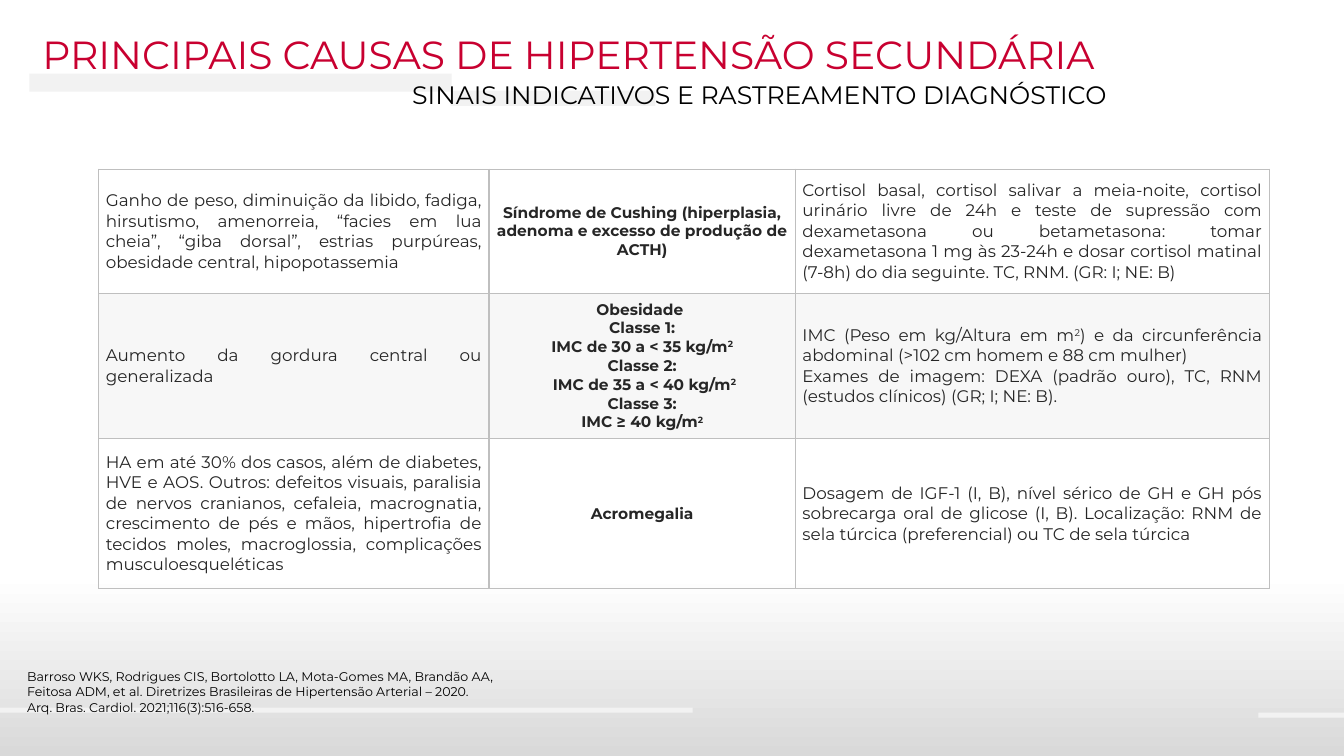
from dataclasses import dataclass

from lxml.etree import SubElement
from pptx import Presentation
from pptx.dml.color import RGBColor
from pptx.enum.shapes import MSO_SHAPE
from pptx.enum.text import MSO_ANCHOR, PP_ALIGN
from pptx.oxml.ns import qn
from pptx.slide import Slide
from pptx.table import _Cell
from pptx.text.text import TextFrame
from pptx.util import Inches, Pt

Line = str | tuple[str, ...]


@dataclass(frozen=True)
class Theme:
    font: str = "Montserrat"
    white: str = "FFFFFF"
    bar: str = "F2F2F2"
    shade: str = "D9D9D9"
    border: str = "BFBFBF"
    title: str = "C80030"
    black: str = "000000"
    body: str = "262626"
    title_size: int = 28
    subtitle_size: int = 18
    finding_size: int = 12
    cause_size: int = 11
    citation_size: int = 9


@dataclass(frozen=True)
class Box:
    left: float
    top: float
    width: float
    height: float

    def lengths(self) -> tuple[Inches, Inches, Inches, Inches]:
        return Inches(self.left), Inches(self.top), Inches(self.width), Inches(self.height)


@dataclass(frozen=True)
class Cause:
    height: float
    signs: tuple[Line, ...]
    name: tuple[Line, ...]
    screening: tuple[Line, ...]
    shaded: bool = False


THEME = Theme()
BACKDROP = Box(0, 0, 13.33, 7.5)
BARS = (
    Box(0.29, 0.73, 4.19, 0.18),
    Box(4.47, 0.9, 2.03, 0.15),
    Box(-0.02, 7.02, 6.89, 0.05),
    Box(12.48, 7.07, 0.85, 0.05),
)
TITLE_BOX = Box(0.32, 0.25, 11.46, 0.57)
SUBTITLE_BOX = Box(3.99, 0.74, 9.56, 0.4)
CITATION_BOX = Box(0.17, 6.59, 6.24, 0.56)
TABLE_BOX = Box(0.98, 1.68, 11.61, 4.16)
COLUMN_WIDTHS = (3.87, 3.04, 4.7)
CITATION = (
    "Barroso WKS, Rodrigues CIS, Bortolotto LA, Mota-Gomes MA, Brandão AA,",
    "Feitosa ADM, et al. Diretrizes Brasileiras de Hipertensão Arterial – 2020.",
    "Arq. Bras. Cardiol. 2021;116(3):516-658.",
)
CAUSES = (
    Cause(
        1.23,
        ("Ganho de peso, diminuição da libido, fadiga, hirsutismo, amenorreia, “facies em lua cheia”, "
         "“giba dorsal”, estrias purpúreas, obesidade central, hipopotassemia",),
        ("Síndrome de Cushing (hiperplasia, adenoma e excesso de produção de ACTH)",),
        ("Cortisol basal, cortisol salivar a meia-noite, cortisol urinário livre de 24h e teste de "
         "supressão com dexametasona ou betametasona: tomar dexametasona 1 mg às 23-24h e dosar "
         "cortisol matinal (7-8h) do dia seguinte. TC, RNM. (GR: I; NE: B)",),
    ),
    Cause(
        1.44,
        ("Aumento da gordura central ou generalizada",),
        (
            "Obesidade ",
            "Classe 1:",
            ("IMC de 30 a < 35 kg/m", "2"),
            "Classe 2:",
            (" IMC de 35 a < 40 kg/m", "2"),
            "Classe 3:",
            ("IMC ≥ 40 kg/m", "2"),
        ),
        (
            ("IMC (Peso em kg/Altura em m", "2",
             ") e da circunferência abdominal (>102 cm homem e 88 cm mulher)"),
            "Exames de imagem: DEXA (padrão ouro), TC, RNM (estudos clínicos) (GR; I; NE: B).",
        ),
        shaded=True,
    ),
    Cause(
        1.49,
        ("HA em até 30% dos casos, além de diabetes, HVE e AOS. Outros: defeitos visuais, paralisia de "
         "nervos cranianos, cefaleia, macrognatia, crescimento de pés e mãos, hipertrofia de tecidos "
         "moles, macroglossia, complicações musculoesqueléticas",),
        ("Acromegalia",),
        ("Dosagem de IGF-1 (I, B), nível sérico de GH e GH pós sobrecarga oral de glicose (I, B). "
         "Localização: RNM de sela túrcica (preferencial) ou TC de sela túrcica",),
    ),
)


def write_text(frame: TextFrame, lines: tuple[Line, ...], *, size: int, color: str,
               bold: bool = False, alignment: PP_ALIGN = PP_ALIGN.LEFT) -> None:
    frame.word_wrap = True
    for index, line in enumerate(lines):
        paragraph = frame.add_paragraph() if index else frame.paragraphs[0]
        paragraph.alignment = alignment
        pieces = (line,) if isinstance(line, str) else line
        for position, piece in enumerate(pieces):
            run = paragraph.add_run()
            run.text = piece
            run.font.name = THEME.font
            run.font.size = Pt(size)
            run.font.bold = bold
            run.font.color.rgb = RGBColor.from_string(color)
            if position % 2:
                run._r.get_or_add_rPr().set("baseline", "30000")


def add_backdrop(slide: Slide) -> None:
    backdrop = slide.shapes.add_shape(MSO_SHAPE.RECTANGLE, *BACKDROP.lengths())
    backdrop.shadow.inherit = False
    backdrop.line.fill.background()
    backdrop.fill.gradient()
    backdrop.fill.gradient_angle = 270
    stops = ((0.76, THEME.white), (1, THEME.shade))
    for stop, (position, color) in zip(backdrop.fill.gradient_stops, stops):
        stop.position = position
        stop.color.rgb = RGBColor.from_string(color)


def add_bar(slide: Slide, box: Box) -> None:
    bar = slide.shapes.add_shape(MSO_SHAPE.RECTANGLE, *box.lengths())
    bar.shadow.inherit = False
    bar.line.fill.background()
    bar.fill.solid()
    bar.fill.fore_color.rgb = RGBColor.from_string(THEME.bar)


def add_title(slide: Slide) -> None:
    title = slide.shapes.title
    title.left, title.top, title.width, title.height = TITLE_BOX.lengths()
    title.text_frame.vertical_anchor = MSO_ANCHOR.TOP
    write_text(title.text_frame, ("PRINCIPAIS CAUSAS DE HIPERTENSÃO SECUNDÁRIA",),
               size=THEME.title_size, color=THEME.title)
    title.element.getparent().append(title.element)


def format_cell(cell: _Cell, shaded: bool) -> None:
    cell.vertical_anchor = MSO_ANCHOR.MIDDLE
    cell.margin_left = cell.margin_right = Inches(0.07)
    cell.margin_top = cell.margin_bottom = 0
    properties = cell._tc.get_or_add_tcPr()
    for side in ("a:lnL", "a:lnR", "a:lnT", "a:lnB"):
        border = SubElement(properties, qn(side), w=str(Pt(1)))
        fill = SubElement(border, qn("a:solidFill"))
        SubElement(fill, qn("a:srgbClr"), val=THEME.border)
    if shaded:
        cell.fill.solid()
        cell.fill.fore_color.rgb = RGBColor.from_string(THEME.shade)
        color = properties.find(f"{qn('a:solidFill')}/{qn('a:srgbClr')}")
        SubElement(color, qn("a:alpha"), val="20000")
    else:
        cell.fill.background()


def add_causes_table(slide: Slide) -> None:
    table = slide.shapes.add_table(len(CAUSES), len(COLUMN_WIDTHS), *TABLE_BOX.lengths()).table
    table.first_row = table.horz_banding = False
    for column, width in zip(table.columns, COLUMN_WIDTHS):
        column.width = Inches(width)
    for row, cause in zip(table.rows, CAUSES):
        row.height = Inches(cause.height)
        for cell, lines in zip(row.cells, (cause.signs, cause.name, cause.screening)):
            is_name = lines is cause.name
            format_cell(cell, cause.shaded)
            write_text(cell.text_frame, lines, color=THEME.body, bold=is_name,
                       size=THEME.cause_size if is_name else THEME.finding_size,
                       alignment=PP_ALIGN.CENTER if is_name else PP_ALIGN.JUSTIFY)


def main() -> None:
    presentation = Presentation()
    presentation.slide_width, presentation.slide_height = Inches(13.33), Inches(7.5)
    slide = presentation.slides.add_slide(presentation.slide_layouts.get_by_name("Title Only"))
    add_backdrop(slide)
    for box in BARS:
        add_bar(slide, box)
    add_causes_table(slide)
    citation = slide.shapes.add_textbox(*CITATION_BOX.lengths())
    write_text(citation.text_frame, CITATION, size=THEME.citation_size, color=THEME.black)
    add_title(slide)
    subtitle = slide.shapes.add_textbox(*SUBTITLE_BOX.lengths())
    write_text(subtitle.text_frame, ("SINAIS INDICATIVOS E RASTREAMENTO DIAGNÓSTICO",),
               size=THEME.subtitle_size, color=THEME.black)
    presentation.save("out.pptx")


if __name__ == "__main__":
    main()
